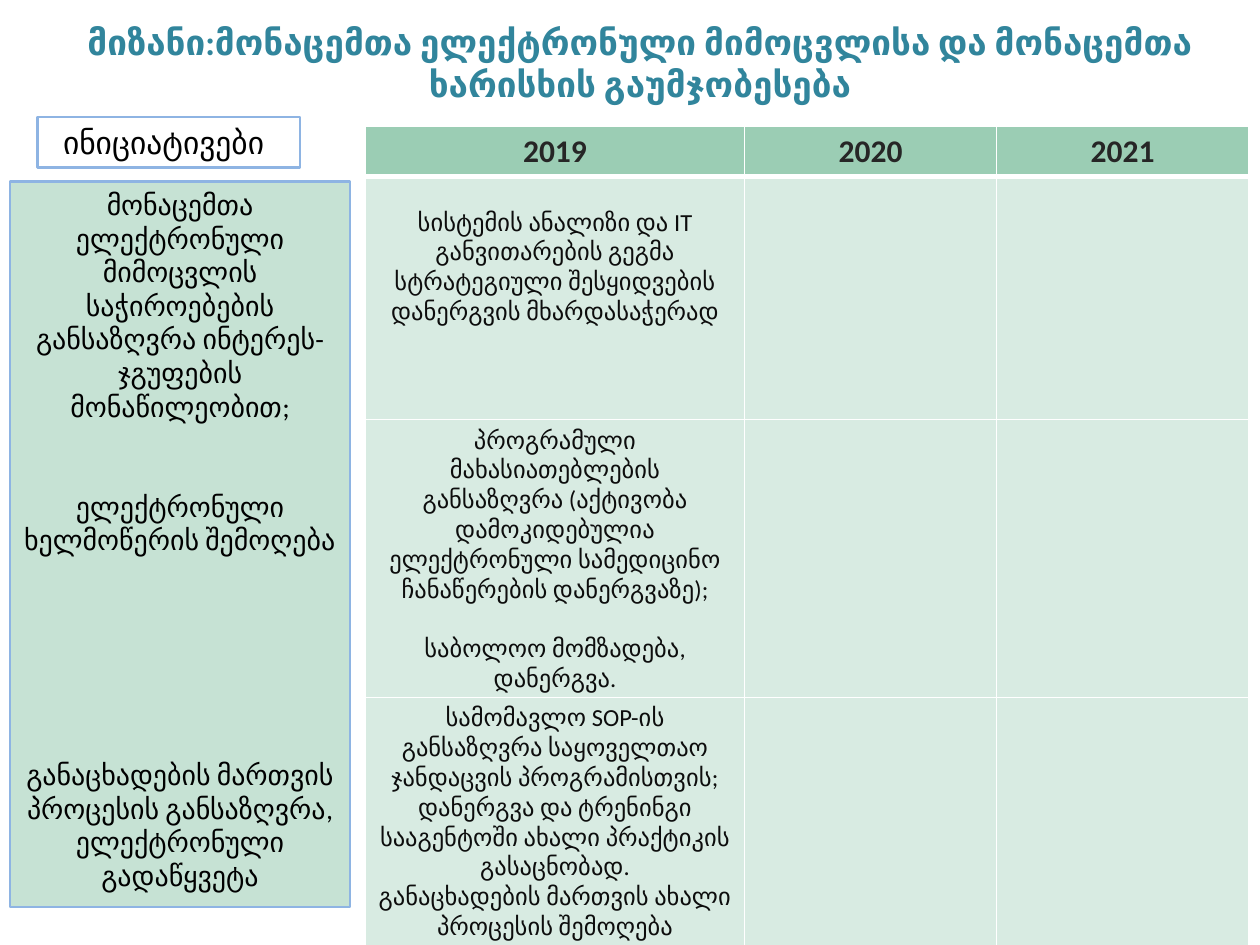
import pptx
import pptx.util
import pptx.dml.color
import pptx.enum.shapes
import pptx.enum.text
import pptx.oxml.ns
import lxml.etree

HUES = {
    "title": "31859C",
    "line": "8EB4E3",
    "green": "339966",
    "black": "000000",
    "head": "262626",
    "body": "0D0D0D",
    "white": "FFFFFF",
}
WIDE = pptx.util.Inches(10)
HIGH = pptx.util.Inches(7.5)
COLS = [30.1, 20, 20]
ROWS = [5.07, 25.73, 29.33, 26.27]

TITLE = "მიზანი:მონაცემთა ელექტრონული მიმოცვლისა და მონაცემთა ხარისხის გაუმჯობესება"
LABEL = "ინიციატივები"
TASKS = [
    "მონაცემთა ელექტრონული მიმოცვლის საჭიროებების განსაზღვრა ინტერეს-ჯგუფების მონაწილეობით;",
    "ელექტრონული ხელმოწერის შემოღება",
    "განაცხადების მართვის პროცესის განსაზღვრა, ელექტრონული გადაწყვეტა",
]
YEARS = ["2019", "2020", "2021"]
STEPS = [
    ["სისტემის ანალიზი და IT განვითარების გეგმა სტრატეგიული შესყიდვების დანერგვის მხარდასაჭერად"],
    [
        "პროგრამული მახასიათებლების განსაზღვრა (აქტივობა დამოკიდებულია ელექტრონული სამედიცინო ჩანაწერების დანერგვაზე);",
        "საბოლოო მომზადება, დანერგვა.",
    ],
    [
        "სამომავლო SOP-ის განსაზღვრა საყოველთაო ჯანდაცვის პროგრამისთვის;",
        "დანერგვა და ტრენინგი სააგენტოში ახალი პრაქტიკის გასაცნობად.",
        "განაცხადების მართვის ახალი პროცესის შემოღება",
    ],
]


def across(share):
    return round(WIDE * share / 100)


def down(share):
    return round(HIGH * share / 100)


def area(left, top, width, height):
    return across(left), down(top), across(width), down(height)


def hue(name):
    return pptx.dml.color.RGBColor.from_string(HUES[name])


def tint(fill, name, node, alpha=100):
    fill.solid()
    fill.fore_color.rgb = hue(name)
    color = next(node.iter(pptx.oxml.ns.qn("a:srgbClr")))
    lxml.etree.SubElement(color, pptx.oxml.ns.qn("a:alpha"), val=str(alpha * 1000))


def write(frame, texts, size, color, bold=False, align="CENTER", anchor="TOP", gaps=()):
    frame.word_wrap = True
    frame.vertical_anchor = pptx.enum.text.MSO_ANCHOR[anchor]
    for index, text in enumerate(texts):
        para = frame.add_paragraph() if index else frame.paragraphs[0]
        para.alignment = pptx.enum.text.PP_ALIGN[align]
        if index and gaps:
            para.space_before = pptx.util.Pt(gaps[index - 1])
        run = para.add_run()
        run.text = text
        run.font.name = "Calibri"
        run.font.size = pptx.util.Pt(size)
        run.font.bold = bold
        run.font.color.rgb = hue(color)


def panel(slide, box, alpha=None):
    shape = slide.shapes.add_shape(pptx.enum.shapes.MSO_SHAPE.RECTANGLE, *box)
    shape.shadow.inherit = False
    if alpha is None:
        shape.fill.background()
    else:
        tint(shape.fill, "green", shape.element.spPr, alpha)
    shape.line.color.rgb = hue("line")
    shape.line.width = pptx.util.Pt(1.5)
    return shape


def border(cell, side, width):
    name = pptx.oxml.ns.qn
    props = cell._tc.get_or_add_tcPr()
    line = lxml.etree.SubElement(props, name("a:ln" + side), w=str(pptx.util.Pt(width)))
    fill = lxml.etree.SubElement(line, name("a:solidFill"))
    lxml.etree.SubElement(fill, name("a:srgbClr"), val=HUES["white"])


def paint(cell, alpha, top, base):
    for side, width in zip("LRTB", (1, 1, top, base)):
        border(cell, side, width)
    props = cell._tc.tcPr
    cell.fill.solid()
    tint(cell.fill, "green", props.find(pptx.oxml.ns.qn("a:solidFill")), alpha)


def plan(slide):
    box = area(29, 13.33, sum(COLS), sum(ROWS))
    table = slide.shapes.add_table(len(ROWS), len(COLS), *box).table
    for column, share in zip(table.columns, COLS):
        column.width = across(share)
    for index, (row, share) in enumerate(zip(table.rows, ROWS)):
        row.height = down(share)
        for cell in row.cells:
            paint(cell, 19 if index else 49, 3 if index == 1 else 1, 1 if index else 3)
    for index, year in enumerate(YEARS):
        write(table.cell(0, index).text_frame, [year], size=18, color="head", bold=True)
    for index, texts in enumerate(STEPS, 1):
        gaps = [17] if index == 2 else []
        write(table.cell(index, 0).text_frame, texts, size=14, color="body", gaps=gaps)
    table.cell(1, 0).margin_top = down(3.33)


def main():
    deck = pptx.Presentation()
    deck.slide_width, deck.slide_height = WIDE, HIGH
    slide = deck.slides.add_slide(deck.slide_layouts[6])
    title = slide.shapes.add_textbox(*area(5.8, 0.13, 90, 13.07))
    write(title.text_frame, [TITLE], size=20, color="title", bold=True, anchor="MIDDLE")
    label = panel(slide, area(3, 12.4, 20.8, 5.33))
    label.text_frame.margin_left = across(2)
    write(label.text_frame, [LABEL], size=18, color="black", align="LEFT")
    side = panel(slide, area(0.8, 19.2, 27, 76.8), alpha=28)
    write(side.text_frame, TASKS, size=16, color="black", gaps=[38, 115])
    plan(slide)
    deck.save("out.pptx")


if __name__ == "__main__":
    main()
